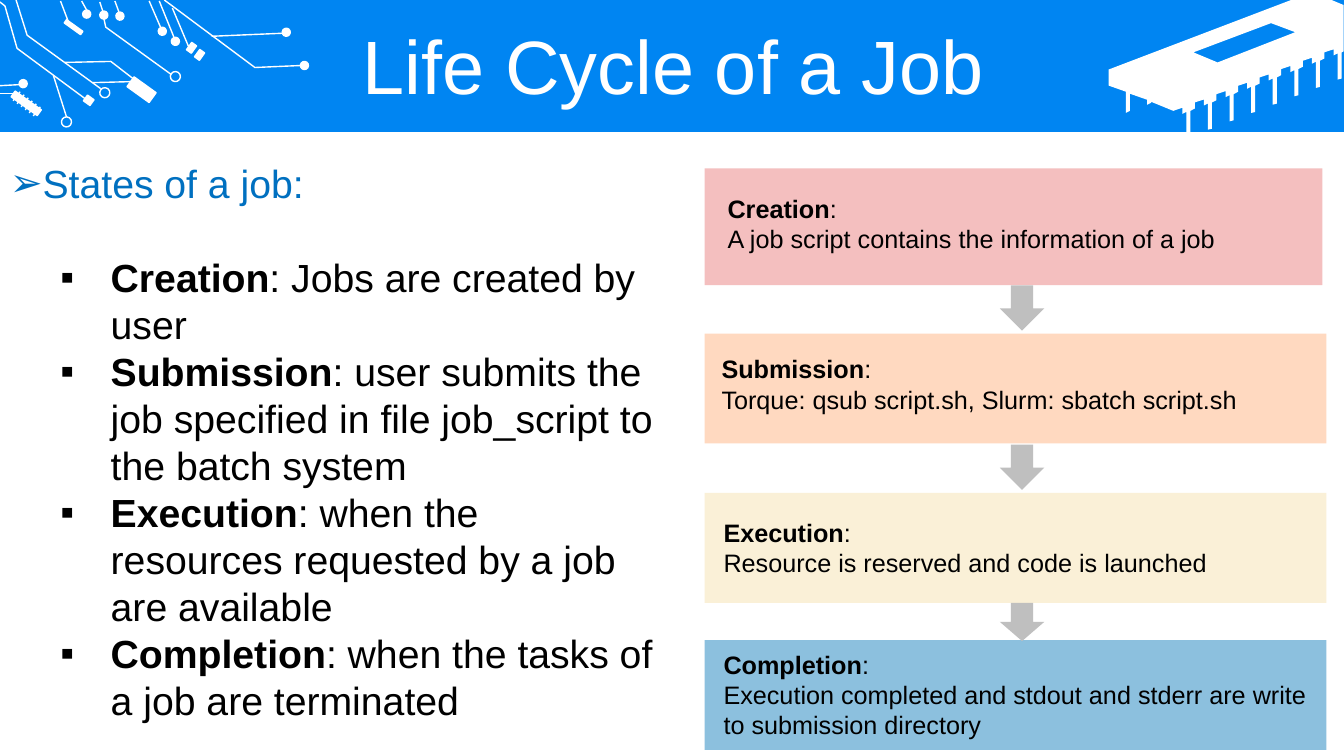
import pptx
import pptx.util
import pptx.dml.color
import pptx.enum.shapes
import pptx.enum.text
import pptx.oxml.ns
from lxml import etree

SHAPE = pptx.enum.shapes.MSO_SHAPE
ALIGN = pptx.enum.text.PP_ALIGN
ANCHOR = pptx.enum.text.MSO_ANCHOR
WIDTH, HEIGHT = pptx.util.Inches(40 / 3), pptx.util.Inches(7.5)
COLS, ROWS = 40 / 3, 7.5
WHITE, BLUE, GREY = "FFFFFF", "0085F2", "BFBFBF"
TILT = 35.7

STATES = [
    ("Creation", "Jobs are created by user"),
    ("Submission", "user submits the job specified in file job_script to the batch system"),
    ("Execution", "when the resources requested by a job are available"),
    ("Completion", "when the tasks of a job are terminated"),
]
# title, detail, fill, (box top, width, height), (text left, top, height)
STAGES = [
    ("Creation", "A job script contains the information of a job",
     "F4BFBF", (1.67, 6.13, 1.16), (7.12, 1.87, 0.71)),
    ("Submission", "Torque: qsub script.sh, Slurm: sbatch script.sh",
     "FFD9C0", (3.31, 6.17, 1.09), (7.06, 3.46, 0.71)),
    ("Execution", "Resource is reserved and code is launched",
     "FAF0D7", (4.89, 6.17, 1.09), (7.08, 5.08, 0.71)),
    ("Completion", "Execution completed and stdout and stderr are write to submission directory",
     "8CC0DE", (6.35, 6.17, 1.09), (7.08, 6.39, 1.01)),
]
ARROWS = [(2.83, 0.45), (4.41, 0.45), (5.98, 0.38)]

DOTS = [(2.98, 0.61), (2.8, 0.28), (0.82, 0.1), (0.99, 0.11), (1.15, 0.12),
        (0.19, 0.79), (1.7, 0.37), (1.57, 0.27)]
RINGS = [(1.69, 0.71), (0.99, 0.87), (0.61, 1.16)]
PARTS = [(1.27, 0.83, 0.27, 0.12), (0.63, 0.25, 0.2, 0.04), (0.84, 0.96, 0.08, 0.07),
         (1.87, 0.43, 0.06, 0.09), (1.95, 0.5, 0.06, 0.09), (0.1, 0.99, 0.32, 0.07)]
WIRES = [
    (0.6, 0.01, 0.68, 0.22), (0.81, 0.01, 0.86, 0.1), (0.99, 0.02, 1.02, 0.11),
    (1.14, 0.01, 1.18, 0.12), (1.48, 0.01, 1.61, 0.31), (1.58, 0.01, 1.73, 0.38),
    (2.1, 0.36, 2.8, 0.33), (1.71, 0.08, 1.87, 0.46), (0, 0.85, 0.19, 0.84),
    (0, 0.93, 0.14, 0.93), (0.53, 0.75, 0.66, 1.16), (0.92, 0.82, 1.3, 0.81),
]
TRACKS = [
    [(1.63, 0), (2.53, 0.67), (2.99, 0.65)],
    [(0.16, 0), (0.27, 0.35), (1, 0.88)],
    [(0, 0.02), (0.05, 0.06), (0.17, 0.48), (0.86, 0.99)],
    [(0.64, 0.62), (1.1, 0.61), (1.32, 0.78)],
    [(1.03, 0.18), (1.05, 0.27), (1.7, 0.74)],
]


def col(n):
    return round(WIDTH * n / COLS)


def row(n):
    return round(HEIGHT * n / ROWS)


def area(x, y, w, h):
    return col(x), row(y), col(w), row(h)


def rgb(value):
    return pptx.dml.color.RGBColor.from_string(value)


def paint(sp, fill=None, line=None):
    sp.shadow.inherit = False
    if fill:
        sp.fill.solid()
        sp.fill.fore_color.rgb = rgb(fill)
    else:
        sp.fill.background()
    if line:
        sp.line.color.rgb = rgb(line)
        sp.line.width = pptx.util.Pt(1)
    else:
        sp.line.fill.background()


def add_block(slide, kind, box, fill=None, line=None, rotation=0):
    sp = slide.shapes.add_shape(kind, *area(*box))
    sp.rotation = rotation
    paint(sp, fill, line)


def add_outline(slide, contours, close, fill=None, line=None):
    contours = [[(col(x), row(y)) for x, y in points] for points in contours]
    builder = slide.shapes.build_freeform(*contours[0][0])
    for i, points in enumerate(contours):
        if i:
            builder.move_to(*points[0])
        builder.add_line_segments(points[1:], close=close)
    paint(builder.convert_to_shape(), fill, line)


def add_wire(slide, x1, y1, x2, y2):
    wire = slide.shapes.add_connector(
        pptx.enum.shapes.MSO_CONNECTOR.STRAIGHT, col(x1), row(y1), col(x2), row(y2))
    wire.line.color.rgb = rgb(WHITE)
    wire.line.width = pptx.util.Pt(1)
    etree.SubElement(wire._element.spPr, pptx.oxml.ns.qn("a:effectLst"))


def add_frame(slide, box, anchor=ANCHOR.TOP):
    tf = slide.shapes.add_textbox(*area(*box)).text_frame
    tf.word_wrap = True
    tf.vertical_anchor = anchor
    return tf


def add_text(tf, *runs, size, color="000000", align=ALIGN.LEFT, spacing=None,
             before=0, bullet=None, indent=(0, 0), level=0):
    """Add a paragraph of (text, bold) runs; indent is left margin and first line."""
    p = tf.paragraphs[0]
    if p.runs:
        p = tf.add_paragraph()
    p.alignment, p.level = align, level
    p.space_before = pptx.util.Pt(before)
    if spacing:
        p.line_spacing = spacing
    if bullet:
        pPr = p._p.get_or_add_pPr()
        pPr.set("marL", str(col(indent[0])))
        pPr.set("indent", str(col(indent[1])))
        etree.SubElement(pPr, pptx.oxml.ns.qn("a:buFont")).set("typeface", "Arial")
        etree.SubElement(pPr, pptx.oxml.ns.qn("a:buChar")).set("char", bullet)
    for text, bold in runs:
        r = p.add_run()
        r.text = text
        r.font.name, r.font.size, r.font.bold = "Arial", pptx.util.Pt(size), bold
        r.font.color.rgb = rgb(color)


def add_circuit(slide):
    for part in PARTS:
        add_block(slide, SHAPE.RECTANGLE, part, WHITE, WHITE, TILT)
    for x, y in DOTS:
        add_block(slide, SHAPE.OVAL, (x, y, 0.08, 0.08), WHITE, WHITE, TILT)
    for x, y in RINGS:
        add_block(slide, SHAPE.OVAL, (x, y, 0.1, 0.1), line=WHITE, rotation=TILT)
    for points in TRACKS:
        add_outline(slide, [points], close=False, line=WHITE)
    teeth = [(0.13 + 0.04 * i, 1 + 0.03 * i, 0.2 + 0.04 * i, 0.91 + 0.03 * i)
             for i in range(6)]
    for wire in WIRES + teeth:
        add_wire(slide, *wire)


def add_chip(slide):
    window = [(12.61, 0.23), (11.84, 0.52), (12.08, 0.62), (12.85, 0.32)]
    pin = [(0, 0), (0, 0.26), (-0.04, 0.27), (-0.04, 0.01),
           (-0.08, 0.03), (-0.08, -0.03), (-0.17, 0), (-0.17, 0.06)]
    pins = [(13.31 - 1.5 / 7 * i + dx, 0.52 + 0.58 / 7 * i + dy)
            for i in range(8) for dx, dy in pin]
    body = [(12.81, 0), (13.21, 0), (13.33, 0.05), (13.33, 0.51), *pins[:-1],
            (11.42, 1.01), (11.42, 1.02), (11.38, 1.04), (11.38, 0.99), (11.21, 0.93),
            (11.21, 1.1), (11.17, 1.12), (11.17, 0.91), (11, 0.85), (11, 0.69)]
    add_outline(slide, [window, body], close=True, fill=WHITE)


def add_states(slide):
    tf = add_frame(slide, (0, 1.53, 6.61, 5.76))
    add_text(tf, ("States of a job:", False), size=28, color="0070C0",
             bullet="➢", indent=(0.31, -0.31))
    for i, (name, meaning) in enumerate(STATES):
        add_text(tf, (name, True), (": " + meaning, False), size=28, level=1,
                 before=0 if i else 33.5, bullet="▪", indent=(1, -0.5))


def add_stages(slide):
    for name, detail, fill, (top, width, height), (x, y, h) in STAGES:
        add_block(slide, SHAPE.RECTANGLE, (6.99, top, width, height), fill)
        tf = add_frame(slide, (x, y, 6.04, h))
        add_text(tf, (name, True), (":", False), size=18)
        add_text(tf, (detail, False), size=18)
    for top, height in ARROWS:
        add_block(slide, SHAPE.DOWN_ARROW, (9.92, top, 0.44, height), GREY)


def main():
    prs = pptx.Presentation()
    prs.slide_width, prs.slide_height = WIDTH, HEIGHT
    slide = prs.slides.add_slide(prs.slide_layouts[6])
    add_block(slide, SHAPE.RECTANGLE, (0, 0, COLS, 1.31), BLUE)
    add_chip(slide)
    add_circuit(slide)
    tf = add_frame(slide, (0.35, 0.3, 12.66, 0.79), ANCHOR.MIDDLE)
    add_text(tf, ("Life Cycle of a Job", False), size=54, color=WHITE,
             align=ALIGN.CENTER, spacing=0.9)
    add_states(slide)
    add_stages(slide)
    prs.save("out.pptx")


if __name__ == "__main__":
    main()
